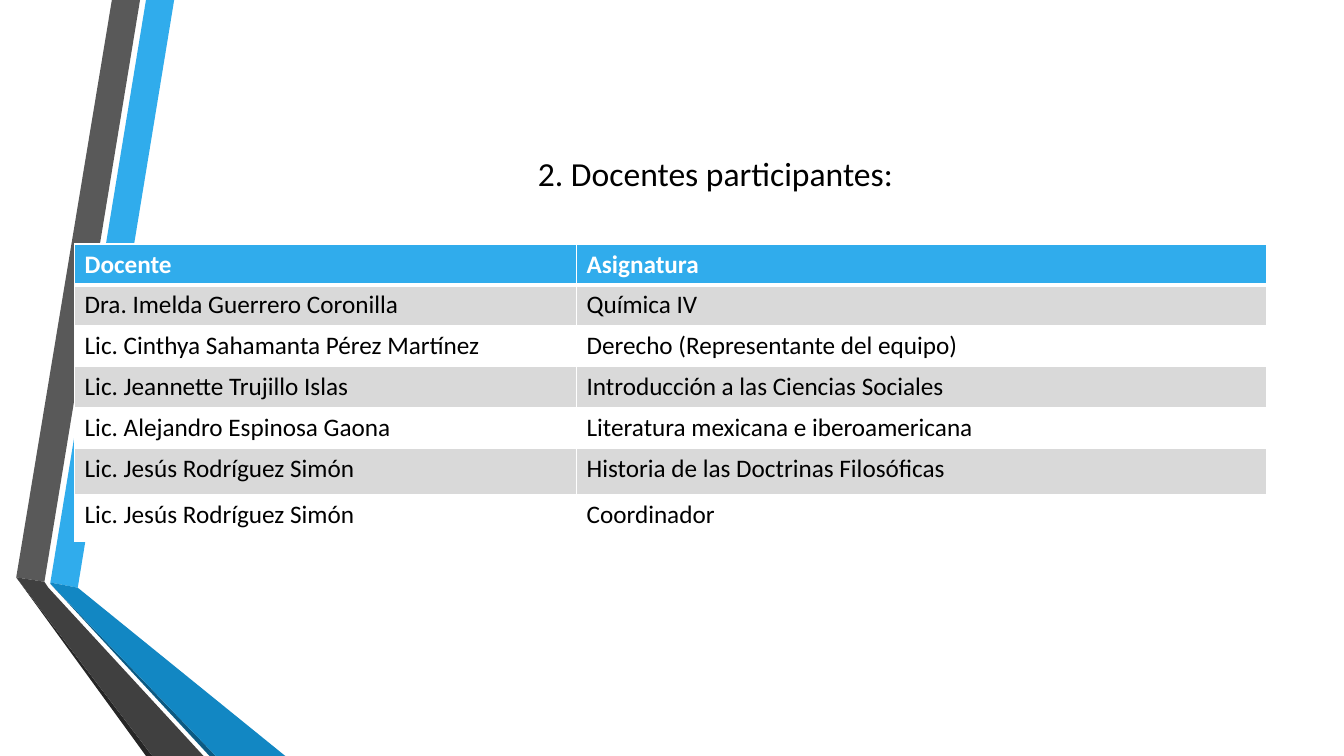
from dataclasses import dataclass

from lxml.etree import SubElement as Sub
from pptx import Presentation
from pptx.dml.color import RGBColor as Rgb
from pptx.enum.text import MSO_ANCHOR as Anchor, PP_ALIGN as Align
from pptx.oxml.ns import qn
from pptx.util import Cm, Pt

FONT = "Calibri"
WHITE, BLACK, BLUE, GRAY = "FFFFFF", "000000", "30ACEC", "D9D9D9"
BASE = 19.05


@dataclass(frozen=True)
class Band:
    fill: str
    points: tuple[tuple[float, float], ...]


@dataclass(frozen=True)
class Row:
    teacher: str
    subject: str
    height: float = 0.99


BANDS = (
    Band(BLUE, ((1.27, 14.68), (1.96, 14.81), (4.39, 0), (3.68, 0))),
    Band("595959", ((3.53, 0), (2.82, 0), (0.41, 14.55), (1.12, 14.66))),
    Band("262626", ((0.41, 14.55), (3.68, BASE), (3.84, BASE))),
    Band("0C5A82", ((1.27, 14.71), (5.28, BASE), (5.44, BASE))),
    Band("1287C3", ((1.27, 14.68), (1.27, 14.71), (5.44, BASE),
                    (7.19, BASE), (1.96, 14.81))),
    Band("404040", ((5.13, BASE), (1.22, 14.81), (1.12, 14.66),
                    (0.41, 14.55), (3.84, BASE))),
)

ROWS = (
    Row("Docente", "Asignatura"),
    Row("Dra. Imelda Guerrero Coronilla", "Química IV"),
    Row("Lic. Cinthya Sahamanta Pérez Martínez", "Derecho (Representante del equipo)"),
    Row("Lic. Jeannette Trujillo Islas", "Introducción a las Ciencias Sociales"),
    Row("Lic. Alejandro Espinosa Gaona", "Literatura mexicana e iberoamericana"),
    Row("Lic. Jesús Rodríguez Simón", "Historia de las Doctrinas Filosóficas", 1.17),
    Row("Lic. Jesús Rodríguez Simón", "Coordinador", 1.17),
)
WIDTHS = (12.65, 17.4)


def paint(fill, color: str) -> None:
    fill.solid()
    fill.fore_color.rgb = Rgb.from_string(color)


def add_run(para, text: str, size: float, color: str, bold: bool = False) -> None:
    run = para.add_run()
    run.text = text
    run.font.name = FONT
    run.font.size = Pt(size)
    run.font.bold = bold
    paint(run.font.fill, color)


def draw_band(slide, band: Band) -> None:
    first, *rest = [(Cm(x), Cm(y)) for x, y in band.points]
    form = slide.shapes.build_freeform(*first)
    form.add_line_segments(rest, close=True)
    shape = form.convert_to_shape()
    shape.shadow.inherit = False
    paint(shape.fill, band.fill)
    shape.line.fill.background()


def draw_title(slide) -> None:
    title = slide.shapes.title
    title.left, title.top = Cm(4.11), Cm(1.91)
    title.width, title.height = Cm(27.84), Cm(4.88)
    frame = title.text_frame
    frame.word_wrap = True
    frame.vertical_anchor = Anchor.MIDDLE
    para = frame.paragraphs[0]
    para.alignment = Align.CENTER
    add_run(para, "2. Docentes participantes:", 24, BLACK)


def set_edge(cell, side: str, width: float) -> None:
    props = cell._tc.get_or_add_tcPr()
    line = Sub(props, qn(f"a:ln{side}"), w=str(Pt(width)))
    Sub(Sub(line, qn("a:solidFill")), qn("a:srgbClr"), val=WHITE)


def draw_table(slide) -> None:
    total = sum(row.height for row in ROWS)
    table = slide.shapes.add_table(
        len(ROWS), len(WIDTHS), Cm(1.88), Cm(6.15), Cm(sum(WIDTHS)), Cm(total)
    ).table
    for col, width in zip(table.columns, WIDTHS):
        col.width = Cm(width)
    for i, row in enumerate(ROWS):
        table.rows[i].height = Cm(row.height)
        head = i == 0
        fill = BLUE if head else GRAY if i % 2 else WHITE
        for j, text in enumerate((row.teacher, row.subject)):
            cell = table.cell(i, j)
            for side in "LRTB":
                thick = (head and side == "B") or (i == 1 and side == "T")
                set_edge(cell, side, 3 if thick else 1)
            paint(cell.fill, fill)
            add_run(cell.text_frame.paragraphs[0], text, 18,
                    WHITE if head else BLACK, head)


def main() -> None:
    deck = Presentation()
    deck.slide_width, deck.slide_height = Cm(33.87), Cm(BASE)
    slide = deck.slides.add_slide(deck.slide_layouts[5])
    paint(slide.background.fill, WHITE)
    for band in BANDS:
        draw_band(slide, band)
    draw_title(slide)
    draw_table(slide)
    deck.save("out.pptx")


if __name__ == "__main__":
    main()
